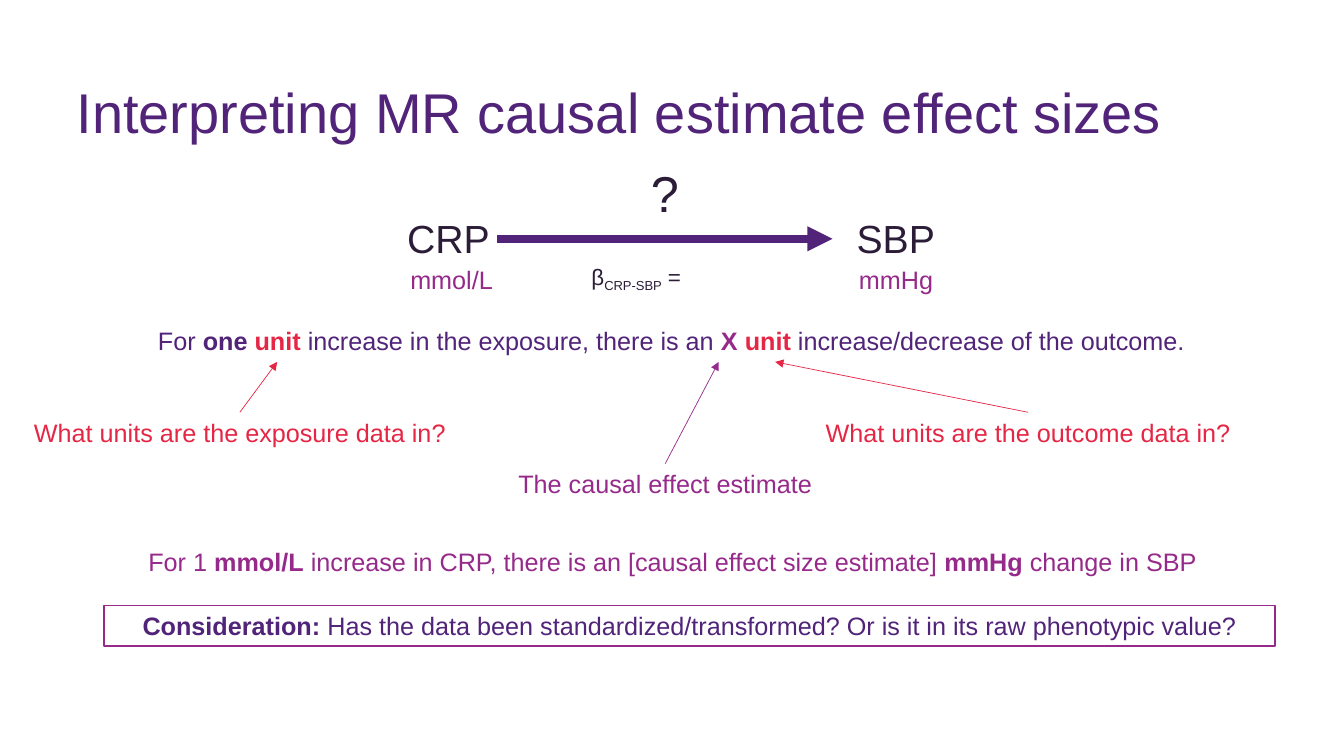
from dataclasses import dataclass
from lxml.etree import SubElement
from pptx import Presentation
from pptx.dml.color import RGBColor as RGB
from pptx.enum.shapes import MSO_CONNECTOR as CONN, MSO_SHAPE as SHAPE
from pptx.enum.text import MSO_ANCHOR as ANCHOR, MSO_AUTO_SIZE as FIT, PP_ALIGN as ALIGN
from pptx.oxml.ns import qn
from pptx.util import Pt


@dataclass(frozen=True)
class Theme:
    font: str = "Arial"
    purple: RGB = RGB(0x51, 0x24, 0x7A)
    dark: RGB = RGB(0x2B, 0x1D, 0x37)
    red: RGB = RGB(0xE6, 0x26, 0x45)
    magenta: RGB = RGB(0x96, 0x2A, 0x8B)
    white: RGB = RGB(0xFF, 0xFF, 0xFF)
    title: int = 40
    question: int = 36
    variable: int = 28
    body: int = 18
    beta: int = 16


T = Theme()
LINE_H = 28.8


def write(tf, runs, size, color, align=ALIGN.CENTER):
    """Fill one paragraph; each run is (text, bold, colour or None, baseline)."""
    p = tf.paragraphs[0]
    p.alignment = align
    p.font.name, p.font.size = T.font, Pt(size)
    p.font.color.rgb = color
    for text, bold, run_color, baseline in runs:
        r = p.add_run()
        r.text = text
        if bold:
            r.font.bold = True
        if run_color is not None:
            r.font.color.rgb = run_color
        if baseline:
            r._r.get_or_add_rPr().set("baseline", str(baseline))
    return p


def run(text, bold=False, color=None, baseline=0):
    return text, bold, color, baseline


def add_text(slide, box, runs, size=T.body, color=T.purple, align=ALIGN.CENTER, wrap=True):
    sp = slide.shapes.add_textbox(*map(Pt, box))
    tf = sp.text_frame
    tf.word_wrap = wrap
    tf.auto_size = FIT.SHAPE_TO_FIT_TEXT
    write(tf, runs, size, color, align)
    return sp


def add_arrow(slide, start, end, color, width):
    cx = slide.shapes.add_connector(CONN.STRAIGHT, *map(Pt, (*start, *end)))
    cx.line.color.rgb = color
    cx.line.width = Pt(width)
    SubElement(cx.line._get_or_add_ln(), qn("a:tailEnd"), type="triangle")
    SubElement(cx._element.spPr, qn("a:effectLst"))
    return cx


def add_title(slide, box):
    sp = slide.shapes.add_textbox(*map(Pt, box))
    tf = sp.text_frame
    tf.word_wrap = True
    tf.margin_left = tf.margin_right = tf.margin_top = tf.margin_bottom = 0
    p = write(tf, [run("Interpreting MR causal estimate effect sizes")],
              T.title, T.purple, ALIGN.LEFT)
    p.line_spacing = 0.9


def add_causal_diagram(slide, left, top):
    """Exposure, arrow and outcome, with the units below."""
    labels = [
        (40.3, 37.5, 74.2, 41, T.variable, [run("CRP")]),
        (361.4, 37.5, 71.3, 41, T.variable, [run("SBP")]),
        (172, 72, 85.7, 26.6, T.beta,
         [run("β"), run("CRP-SBP", baseline=-25000), run(" =")]),
        (214.5, 0, 34.6, 51, T.question, [run("?")]),
    ]
    for x, y, w, h, size, runs in labels:
        add_text(slide, (left + x, top + y, w, h), runs, size, T.dark, ALIGN.LEFT, wrap=False)
    add_arrow(slide, (left + 111.6, top + 58.3), (left + 351.3, top + 58.3), T.purple, 6)
    for x, w, unit in [(0, 158.4, "mmol/L"), (329.7, 133.9, "mmHg")]:
        add_text(slide, (left + x, top + 72.7, w, LINE_H), [run(unit)], color=T.magenta)


def add_interpretation(slide, box):
    """The general sentence, with notes pointing up at its words."""
    left, top, width = box
    add_text(slide, (left, top, width, LINE_H), [
        run("For "), run("one ", True), run("unit ", True, T.red),
        run("increase in the exposure, there is an "),
        run("X ", True, T.magenta), run("unit", True, T.red),
        run(" increase/decrease of the outcome."),
    ])
    notes = [
        ("What units are the exposure data in?", T.red, -90, 65.5, 108),
        ("What units are the outcome data in?", T.red, 473, 65.5, 463.7),
        ("The causal effect estimate", T.magenta, 213.8, 102.2, 423.4),
    ]
    note_w = 342.7
    for text, color, x, y, target in notes:
        sp = add_text(slide, (left + x, top + y, note_w, LINE_H), [run(text)], color=color)
        cx = add_arrow(slide, (left + x + note_w / 2, top + y),
                       (left + target, top + 29.5), color, 0.5)
        cx.begin_connect(sp, 0)


def add_example(slide, box):
    add_text(slide, box, [
        run("For 1 "), run("mmol/L", True),
        run(" increase in CRP, there is an [causal effect size estimate] "),
        run("mmHg ", True), run("change in SBP"),
    ], color=T.magenta)


def add_consideration(slide, box):
    sp = slide.shapes.add_shape(SHAPE.RECTANGLE, *map(Pt, box))
    sp.shadow.inherit = False
    sp.fill.solid()
    sp.fill.fore_color.rgb = T.white
    sp.line.color.rgb = T.magenta
    sp.line.width = Pt(1)
    tf = sp.text_frame
    tf.word_wrap = True
    tf.vertical_anchor = ANCHOR.MIDDLE
    write(tf, [
        run("Consideration: ", True),
        run("Has the data been standardized/transformed? Or is it in its raw phenotypic value?"),
    ], T.body, T.purple)


def main():
    prs = Presentation()
    prs.slide_width, prs.slide_height = Pt(960), Pt(540)
    slide = prs.slides.add_slide(prs.slide_layouts[6])
    add_title(slide, (54.7, 60.5, 850.3, 36.7))
    add_causal_diagram(slide, 243.4, 112.3)
    add_interpretation(slide, (90, 229, 779))
    add_example(slide, (38.2, 386.6, 884.2, LINE_H))
    add_consideration(slide, (74.2, 432.7, 836.6, LINE_H))
    prs.save("out.pptx")


if __name__ == "__main__":
    main()
